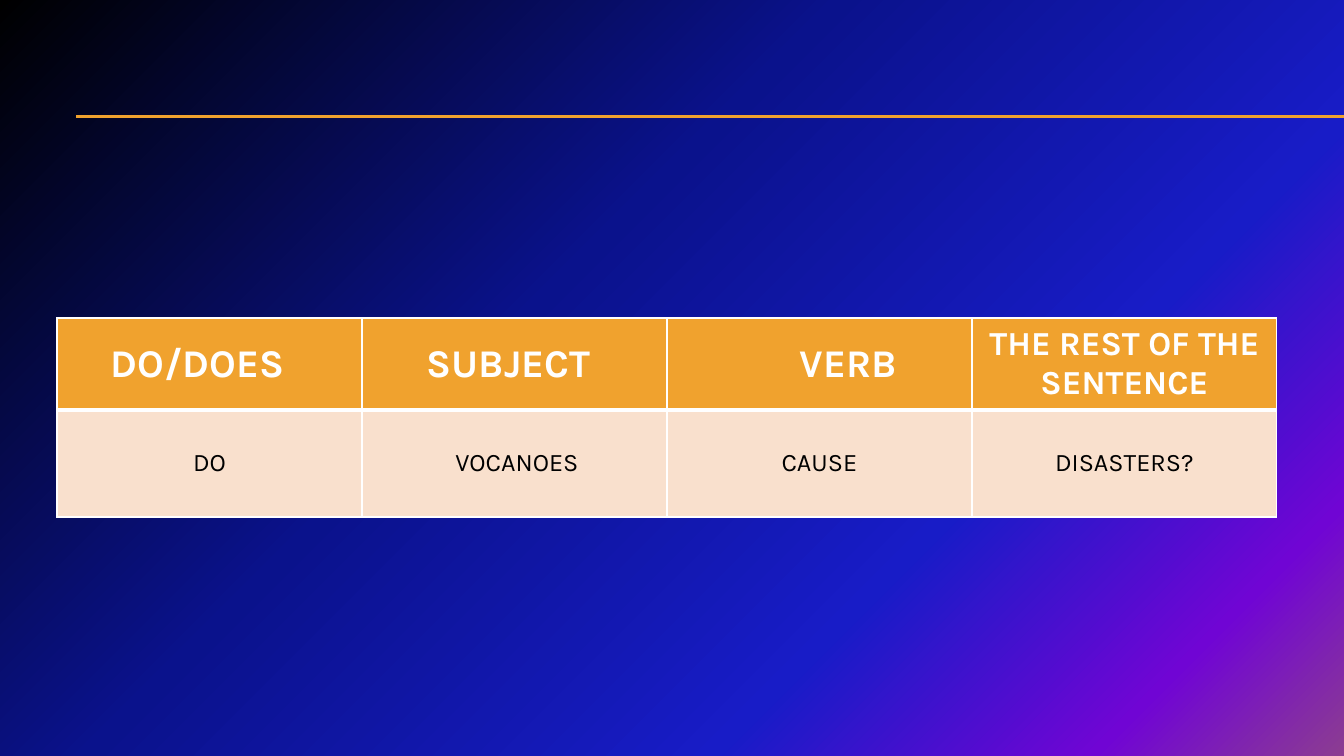
"""Build the question word-order slide with its header line and table."""
from lxml import etree
from pptx import Presentation
from pptx.dml.color import RGBColor
from pptx.enum.shapes import MSO_CONNECTOR
from pptx.enum.text import MSO_ANCHOR, PP_ALIGN
from pptx.oxml import parse_xml
from pptx.oxml.ns import nsdecls, qn
from pptx.util import Pt

LEFT, CENTER = PP_ALIGN.LEFT, PP_ALIGN.CENTER
MIDDLE = MSO_ANCHOR.MIDDLE
STRAIGHT = MSO_CONNECTOR.STRAIGHT
EMU_PER_PX = 914400 / 100.8
ORANGE, PEACH, WHITE, BLACK = "F0A22E", "F9E0CD", "FFFFFF", "000000"


def px(length):
    return round(length * EMU_PER_PX)


def write(cell, text, size, color, bold, align, inset):
    cell.vertical_anchor = MIDDLE
    cell.margin_left, cell.margin_right = px(inset), px(13)
    cell.margin_top = cell.margin_bottom = px(5)
    paragraph = cell.text_frame.paragraphs[0]
    paragraph.alignment = align
    run = paragraph.add_run()
    run.text = text
    run.font.name = "Karla"
    run.font.size = Pt(size)
    run.font.bold = bold
    run.font.color.rgb = RGBColor.from_string(color)


deck = Presentation()
deck.slide_width, deck.slide_height = px(1344), px(756)
slide = deck.slides.add_slide(deck.slide_layouts[6])

backdrop = slide.background.fill
backdrop.gradient()
gradient = slide.background._cSld.find(".//" + qn("a:gradFill"))
stops = gradient.find(qn("a:gsLst"))
for stop in list(stops):
    stops.remove(stop)
for percent, color in [(0, BLACK), (40, "0A128C"), (70, "181CC7"), (88, "7005D4"), (100, "8C3D91")]:
    stop = etree.SubElement(stops, qn("a:gs"), pos=str(percent * 1000))
    etree.SubElement(stop, qn("a:srgbClr"), val=color)
backdrop.gradient_angle = 315

for y in (116, 117):
    rule = slide.shapes.add_connector(STRAIGHT, px(76), px(y), px(1344), px(y))
    rule.line.color.rgb = RGBColor.from_string(ORANGE)
    rule.line.width = Pt(0.75)
    etree.SubElement(rule._element.spPr, qn("a:effectLst"))

headings = [("DO/DOES", 28, LEFT, 54), ("SUBJECT", 28, LEFT, 65),
            ("VERB", 28, LEFT, 133), ("THE REST OF THE SENTENCE", 24, CENTER, 13)]
question = [("DO", 18, CENTER, 13), ("VOCANOES", 18, CENTER, 18),
            ("CAUSE", 18, CENTER, 13), ("DISASTERS?", 18, CENTER, 13)]
rows = [(headings, 92, ORANGE, WHITE, True, {"L": 1, "R": 1, "T": 1, "B": 3}),
        (question, 107, PEACH, BLACK, False, {"L": 1, "R": 1, "T": 3, "B": 1})]

word_order = slide.shapes.add_table(2, 4, px(57), px(318), px(1220), px(199)).table
for column in word_order.columns:
    column.width = px(305)
for row, (words, height, fill, color, bold, borders) in enumerate(rows):
    word_order.rows[row].height = px(height)
    for column, (text, size, align, inset) in enumerate(words):
        cell = word_order.cell(row, column)
        write(cell, text, size=size, color=color, bold=bold, align=align, inset=inset)
        for side, points in borders.items():
            cell._tc.get_or_add_tcPr().append(parse_xml(
                f'<a:ln{side} {nsdecls("a")} w="{Pt(points)}"><a:solidFill>'
                f'<a:srgbClr val="{WHITE}"/></a:solidFill></a:ln{side}>'))
        cell.fill.solid()
        cell.fill.fore_color.rgb = RGBColor.from_string(fill)

deck.save("out.pptx")
